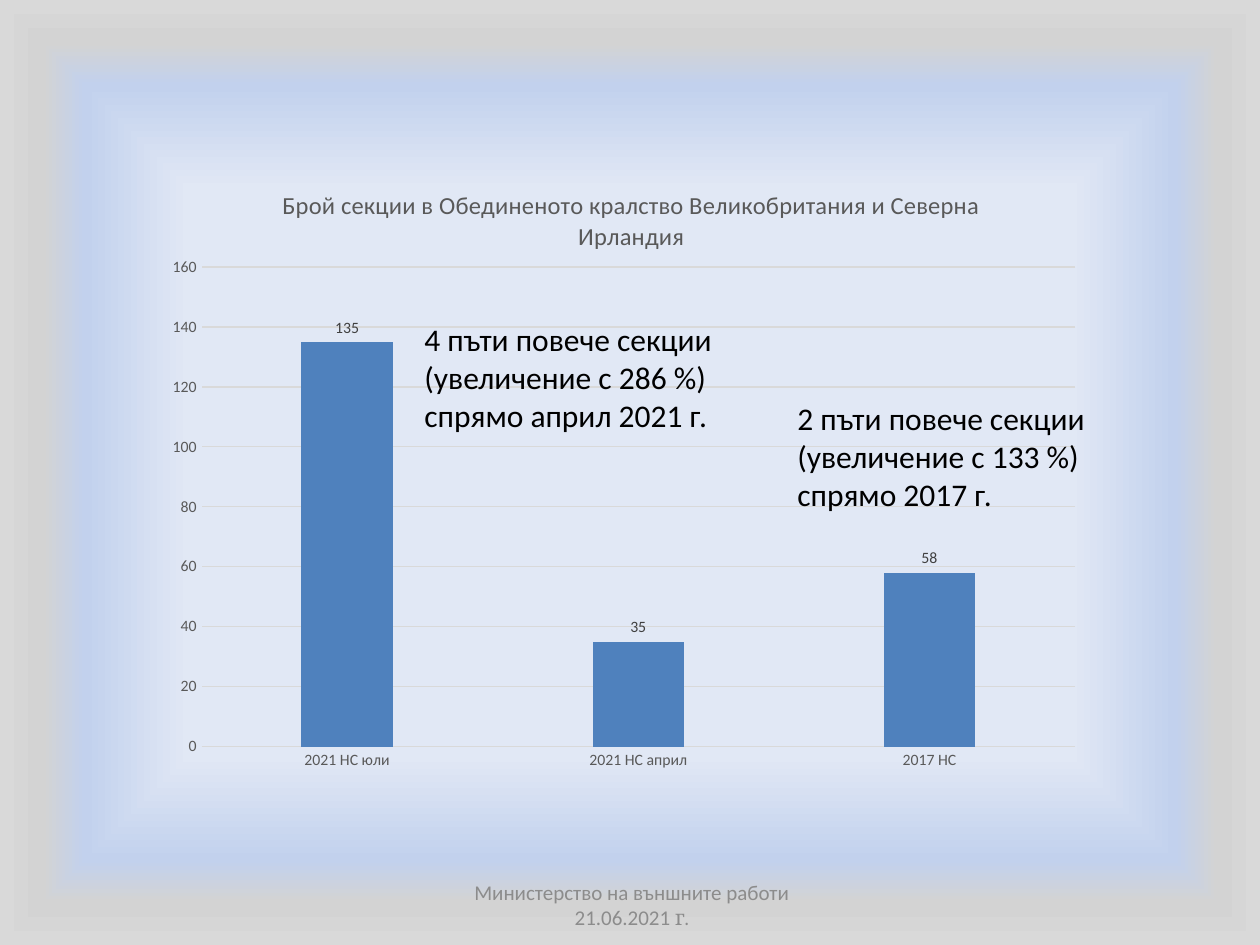
from dataclasses import dataclass

import pptx
import pptx.chart.data
import pptx.dml.color
import pptx.enum.chart
import pptx.enum.text
import pptx.oxml
import pptx.oxml.ns
import pptx.util
from pptx.enum.chart import XL_TICK_MARK

COLORS = {
    "text": "000000", "footer": "8C8C8C", "axis": "595959",
    "label": "404040", "grid": "D9D9D9", "bar": "4F81BD",
}
BACKDROP = {60: "E1E8F5", 82: "C2D1ED", 91: "D3D3D3", 100: "D9D9D9"}  # percent: color
PLOT_SHARE = {"x": 4.4, "y": 16.6, "w": 92.7, "h": 78}  # percent of the chart
FONT = "Calibri"
COLUMNS, ROWS = 100, 75
SLIDE_WIDTH, SLIDE_HEIGHT = pptx.util.Inches(10), pptx.util.Inches(7.5)
HEADING = "Брой секции в Обединеното кралство Великобритания и Северна Ирландия"
SECTIONS = {"2021 НС юли": 135, "2021 НС април": 35, "2017 НС": 58}


@dataclass
class Area:
    """A place on the slide grid."""
    column: float
    row: float
    columns: float
    rows: float

    def lengths(self) -> tuple:
        across, down = SLIDE_WIDTH / COLUMNS, SLIDE_HEIGHT / ROWS
        return (round(self.column * across), round(self.row * down),
                round(self.columns * across), round(self.rows * down))


@dataclass
class Comment:
    text: str
    area: Area


COMMENTS = [
    Comment("4 пъти повече секции (увеличение с 286 %) спрямо април 2021 г.",
            Area(32.7, 24.9, 25.2, 10.1)),
    Comment("2 пъти повече секции (увеличение с 133 %) спрямо 2017 г.",
            Area(62.3, 31.2, 25.2, 10.1)),
]


def rgb(name: str) -> pptx.dml.color.RGBColor:
    return pptx.dml.color.RGBColor.from_string(COLORS[name])


def style(font, size: float, color: str, face: str = FONT) -> None:
    font.size, font.name, font.bold = pptx.util.Pt(size), face, False
    font.color.rgb = rgb(color)


def add_run(paragraph, text: str, *, size: float = 18, color: str = "text",
            face: str = FONT) -> None:
    run = paragraph.add_run()
    run.text = text
    style(run.font, size, color, face)


def add_frame(slide, area: Area):
    frame = slide.shapes.add_textbox(*area.lengths()).text_frame
    frame.word_wrap = True
    return frame


def paint_background(slide) -> None:
    slide.background.fill.gradient()
    gradient = slide.element.find(".//" + pptx.oxml.ns.qn("a:gradFill"))
    stops = "".join(f'<a:gs pos="{share * 1000}"><a:srgbClr val="{color}"/></a:gs>'
                    for share, color in BACKDROP.items())
    centred = pptx.oxml.parse_xml(
        f'<a:gradFill {pptx.oxml.ns.nsdecls("a")} rotWithShape="1">'
        f'<a:gsLst>{stops}</a:gsLst><a:path path="shape">'
        '<a:fillToRect l="50000" t="50000" r="50000" b="50000"/></a:path></a:gradFill>')
    gradient.getparent().replace(gradient, centred)


def style_line(line) -> None:
    line.color.rgb = rgb("grid")
    line.width = pptx.util.Pt(0.75)


def style_axis(axis) -> None:
    axis.major_tick_mark = axis.minor_tick_mark = XL_TICK_MARK.NONE
    style(axis.tick_labels.font, 9, "axis")


def place_plot(chart) -> None:
    """Fix the inner plot area and leave the chart without a fill."""
    qn, spaces = pptx.oxml.ns.qn, pptx.oxml.ns.nsdecls("c", "a")
    root = chart.element
    plot_area = root.find(".//" + qn("c:plotArea"))
    for old in plot_area.findall(qn("c:layout")):
        plot_area.remove(old)
    modes = "".join(f'<c:{side}Mode val="edge"/>' for side in "xy")
    shares = "".join(f'<c:{side} val="{share / 100:.3f}"/>'
                     for side, share in PLOT_SHARE.items())
    plot_area.insert(0, pptx.oxml.parse_xml(
        f'<c:layout {spaces}><c:manualLayout><c:layoutTarget val="inner"/>'
        f'{modes}{shares}</c:manualLayout></c:layout>'))
    root.find(qn("c:chart")).addnext(pptx.oxml.parse_xml(
        f'<c:spPr {spaces}><a:noFill/><a:ln><a:noFill/></a:ln></c:spPr>'))


def add_sections_chart(slide, area: Area) -> None:
    data = pptx.chart.data.CategoryChartData()
    data.categories = list(SECTIONS)
    data.add_series(HEADING, list(SECTIONS.values()))
    chart = slide.shapes.add_chart(pptx.enum.chart.XL_CHART_TYPE.COLUMN_CLUSTERED,
                                   *area.lengths(), data).chart
    style(chart.font, 10, "text")
    chart.has_legend = False
    chart.has_title = True
    add_run(chart.chart_title.text_frame.paragraphs[0], HEADING, size=14, color="axis")

    # Columns and their values
    plot = chart.plots[0]
    plot.gap_width, plot.overlap, plot.vary_by_categories = 219, -27, False
    bars = plot.series[0]
    bars.format.fill.solid()
    bars.format.fill.fore_color.rgb = rgb("bar")
    labels = bars.data_labels
    labels.show_value = True
    labels.position = pptx.enum.chart.XL_LABEL_POSITION.OUTSIDE_END
    style(labels.font, 9, "label")

    # Axes
    style_axis(chart.category_axis)
    style_line(chart.category_axis.format.line)
    counts = chart.value_axis
    style_axis(counts)
    counts.minimum_scale, counts.maximum_scale, counts.major_unit = 0, 160, 20
    counts.format.line.fill.background()
    style_line(counts.major_gridlines.format.line)
    place_plot(chart)


def main() -> None:
    deck = pptx.Presentation()
    deck.slide_width, deck.slide_height = SLIDE_WIDTH, SLIDE_HEIGHT
    slide = deck.slides.add_slide(deck.slide_layouts.get_by_name("Blank"))
    paint_background(slide)

    # Footer
    footer = add_frame(slide, Area(34.3, 69.8, 31.7, 4))
    footer.vertical_anchor = pptx.enum.text.MSO_ANCHOR.MIDDLE
    line = footer.paragraphs[0]
    line.alignment = pptx.enum.text.PP_ALIGN.CENTER
    add_run(line, "Министерство на външните работи 21.06.2021", size=12, color="footer")
    add_run(line, " г.", size=12, color="footer", face="Cambria")

    # Chart with comments over it
    add_sections_chart(slide, Area(12.7, 13.1, 74.8, 48.8))
    for comment in COMMENTS:
        frame = add_frame(slide, comment.area)
        frame.auto_size = pptx.enum.text.MSO_AUTO_SIZE.SHAPE_TO_FIT_TEXT
        add_run(frame.paragraphs[0], comment.text)

    deck.save("out.pptx")


if __name__ == "__main__":
    main()
